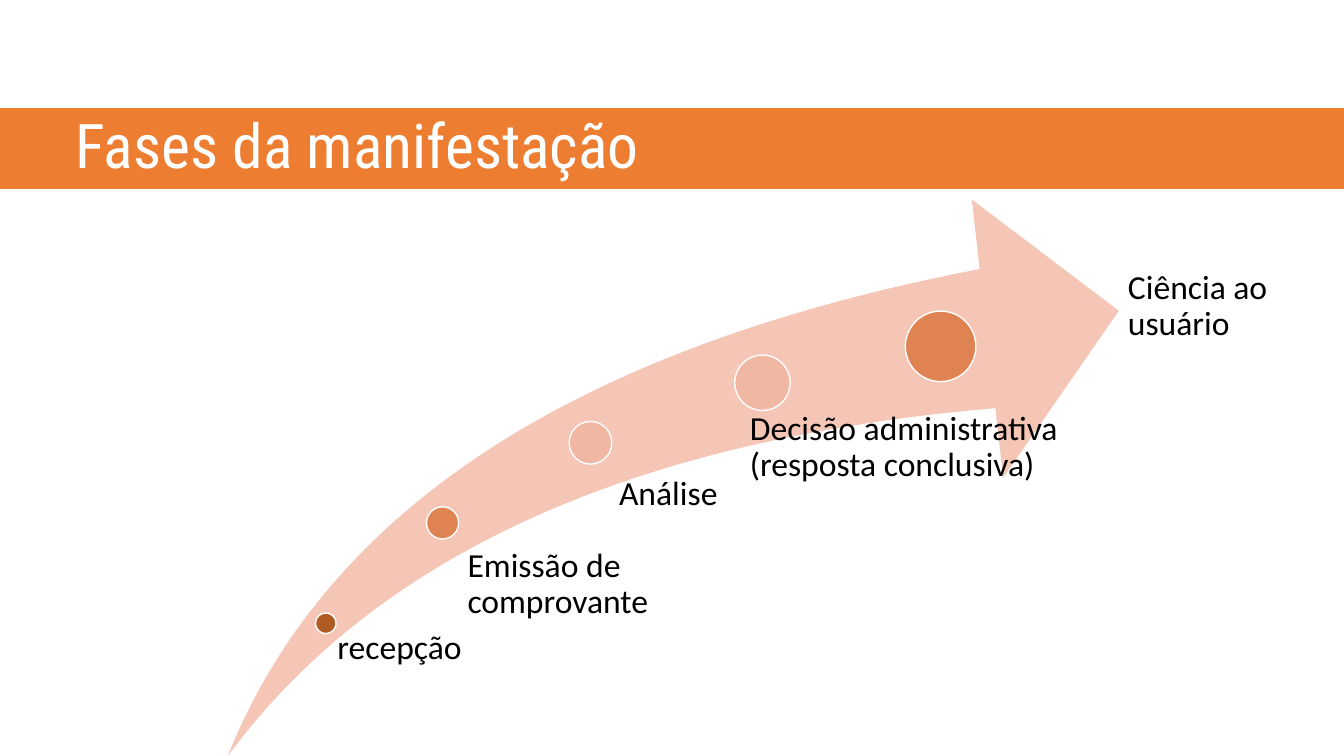
from dataclasses import dataclass

from pptx import Presentation
from pptx.dml.color import RGBColor
from pptx.enum.shapes import MSO_SHAPE
from pptx.enum.text import MSO_ANCHOR, PP_ALIGN
from pptx.util import Pt


@dataclass(frozen=True)
class Theme:
    band: str = "ED7D31"
    arrow: str = "F5C6B6"
    dark: str = "AF5C24"
    medium: str = "DF8353"
    light: str = "F0B7A2"
    white: str = "FFFFFF"
    black: str = "000000"
    title_font: str = "Roboto Condensed"
    body_font: str = "Calibri"
    title_size: int = 44
    body_size: int = 24
    line_width: int = 1
    line_spacing: float = 0.9


class SlideBuilder:
    def __init__(self, slide, theme):
        self.slide = slide
        self.theme = theme

    def shape(self, kind, box, fill, outlined=True):
        sp = self.slide.shapes.add_shape(kind, *map(Pt, box))
        sp.shadow.inherit = False
        sp.fill.solid()
        sp.fill.fore_color.rgb = RGBColor.from_string(fill)
        if outlined:
            sp.line.color.rgb = RGBColor.from_string(self.theme.white)
            sp.line.width = Pt(self.theme.line_width)
        else:
            sp.line.fill.background()
        return sp

    def circle(self, center_x, center_y, diameter, fill):
        box = (center_x - diameter / 2, center_y - diameter / 2, diameter, diameter)
        return self.shape(MSO_SHAPE.OVAL, box, fill)

    def text(self, text, box, font, size, color, insets, anchor=MSO_ANCHOR.TOP):
        """Add wrapped text; insets are left, top, right and bottom."""
        tf = self.slide.shapes.add_textbox(*map(Pt, box)).text_frame
        tf.word_wrap = True
        tf.vertical_anchor = anchor
        tf.margin_left, tf.margin_top, tf.margin_right, tf.margin_bottom = map(Pt, insets)
        tf.text = text
        p = tf.paragraphs[0]
        p.alignment = PP_ALIGN.LEFT
        p.line_spacing = self.theme.line_spacing
        r = p.runs[0]
        r.font.name = font
        r.font.size = Pt(size)
        r.font.color.rgb = RGBColor.from_string(color)

    def title(self, text, box):
        t = self.theme
        self.text(text, box, t.title_font, t.title_size, t.white,
                  (7.2, 3.6, 7.2, 3.6), MSO_ANCHOR.MIDDLE)

    def label(self, text, box, indent):
        t = self.theme
        self.text(text, box, t.body_font, t.body_size, t.black, (indent, 0, 0, 0))


def main():
    prs = Presentation()
    prs.slide_width, prs.slide_height = Pt(960), Pt(540)
    theme = Theme()
    builder = SlideBuilder(prs.slides.add_slide(prs.slide_layouts[6]), theme)

    arrow = builder.shape(MSO_SHAPE.SWOOSH_ARROW, (162.7, 142.5, 636.5, 397.5),
                          theme.arrow, outlined=False)
    arrow.adjustments[0] = arrow.adjustments[1] = 0.25

    # Circle (center x, center y, diameter, colour), label, label box, label indent
    phases = [
        ((232.7, 445.2, 14.6, theme.dark), "recepção", (233.3, 450, 124, 26), 7.8),
        ((316.1, 373.5, 23, theme.medium), "Emissão de comprovante",
         (321.8, 391.7, 153.4, 44.6), 12.2),
        ((421.8, 316.3, 30.5, theme.light), "Análise", (426.2, 340.6, 140.4, 31), 16),
        ((544.6, 273.4, 39.6, theme.light), "Decisão administrativa (resposta conclusiva)",
         (514.8, 293.6, 242, 62.6), 20.9),
        ((671.9, 247.4, 50.4, theme.medium), "Ciência ao usuário",
         (779, 193, 138.2, 56.9), 26.7),
    ]
    for circle, name, box, indent in phases:
        builder.circle(*circle)
        builder.label(name, box, indent)

    builder.shape(MSO_SHAPE.RECTANGLE, (-21.6, 77, 999.4, 58.3), theme.band)
    builder.title("Fases da manifestação", (46.8, 54, 828, 104.4))
    prs.save("out.pptx")


if __name__ == "__main__":
    main()
